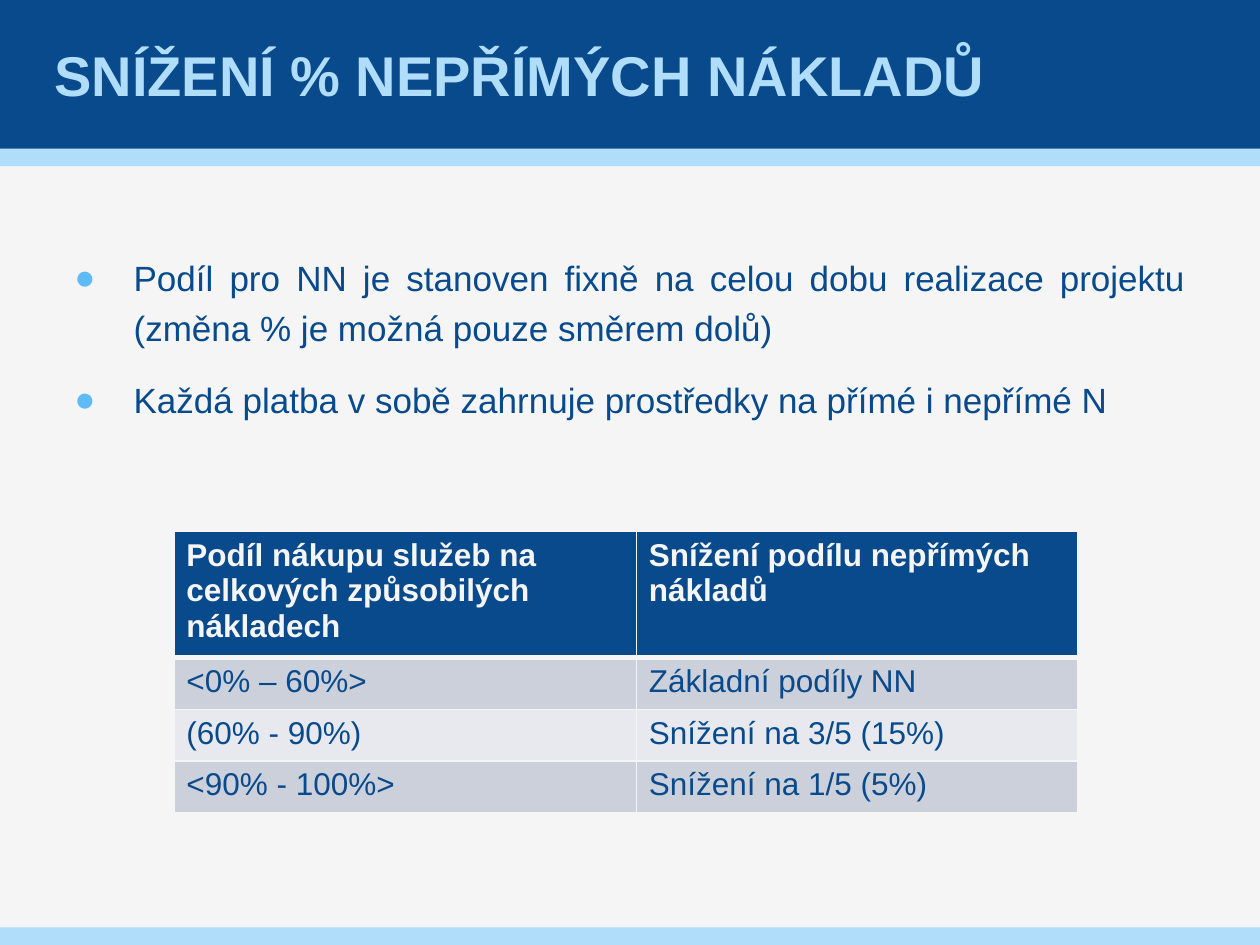
from dataclasses import dataclass

from lxml import etree
from pptx import Presentation, util as u
from pptx.dml.color import RGBColor
from pptx.enum import shapes, text
from pptx.oxml import ns

TITLE = "SNÍŽENÍ % NEPŘÍMÝCH NÁKLADŮ"
BULLETS = [
    "Podíl pro NN je stanoven fixně na celou dobu realizace projektu "
    "(změna % je možná pouze směrem dolů)",
    "Každá platba v sobě zahrnuje prostředky na přímé i nepřímé N",
]
ROWS = [
    ("Podíl nákupu služeb na celkových způsobilých nákladech",
     "Snížení podílu nepřímých nákladů"),
    ("<0% – 60%>", "Základní podíly NN"),
    ("(60% - 90%)", "Snížení na 3/5 (15%)"),
    ("<90% - 100%>", "Snížení na 1/5 (5%)"),
]


@dataclass(frozen=True)
class Theme:
    font: str = "Arial"
    paper: str = "F5F5F5"
    navy: str = "084A8B"
    sky: str = "AFDDFA"
    bullet: str = "5FBBF5"
    bands: tuple = ("E7E9EE", "CCD0DA")
    title_size: int = 32
    body_size: int = 20
    table_size: int = 18


THEME = Theme()
WIDTH, HEIGHT = 10, 7.5
HEADER, STRIPE = 1.18, 0.14
TABLE_LEFT, TABLE_TOP = 1.38, 4.22
COLUMN_WIDTHS = (3.67, 3.5)
ROW_HEIGHTS = (0.93, 0.41, 0.41, 0.41)
INDENT = 0.47


def fill(target, color):
    target.fill.solid()
    target.fill.fore_color.rgb = RGBColor.from_string(color)


def add_color(parent, tag, color):
    holder = etree.SubElement(parent, ns.qn(tag))
    etree.SubElement(holder, ns.qn("a:srgbClr"), val=color)


def write(paragraph, content, *, size, color, bold=False):
    run = paragraph.add_run()
    run.text = content
    run.font.name = THEME.font
    run.font.size = u.Pt(size)
    run.font.bold = bold
    run.font.color.rgb = RGBColor.from_string(color)


def add_bar(slide, top, height, color):
    bar = slide.shapes.add_shape(
        shapes.MSO_SHAPE.RECTANGLE, 0, u.Inches(top), u.Inches(WIDTH), u.Inches(height))
    bar.shadow.inherit = False
    fill(bar, color)
    bar.line.fill.background()


def add_frame(slide, left, top, width, height, side_margin=0):
    frame = slide.shapes.add_textbox(*map(u.Inches, (left, top, width, height))).text_frame
    frame.word_wrap = True
    frame.margin_left = frame.margin_right = u.Inches(side_margin)
    frame.margin_top = frame.margin_bottom = 0
    return frame


def format_bullet(paragraph):
    paragraph.alignment = text.PP_ALIGN.JUSTIFY
    paragraph.line_spacing = u.Pt(28.8)
    paragraph.space_before = paragraph.space_after = u.Pt(6)
    properties = paragraph._p.get_or_add_pPr()
    properties.set("marL", str(u.Inches(INDENT)))
    properties.set("indent", str(-u.Inches(INDENT)))
    add_color(properties, "a:buClr", THEME.bullet)
    etree.SubElement(properties, ns.qn("a:buFont"), typeface=THEME.font)
    etree.SubElement(properties, ns.qn("a:buChar"), char="●")


def add_borders(cell, bottom):
    properties = cell._tc.get_or_add_tcPr()
    for side, points in zip("LRTB", (1, 1, 1, bottom)):
        line = etree.SubElement(properties, ns.qn(f"a:ln{side}"), w=str(u.Pt(points)))
        add_color(line, "a:solidFill", THEME.paper)


def add_cost_table(slide):
    table = slide.shapes.add_table(
        len(ROWS), len(COLUMN_WIDTHS), u.Inches(TABLE_LEFT), u.Inches(TABLE_TOP),
        u.Inches(sum(COLUMN_WIDTHS)), u.Inches(sum(ROW_HEIGHTS))).table
    for column, width in zip(table.columns, COLUMN_WIDTHS):
        column.width = u.Inches(width)
    for index, (row, height, values) in enumerate(zip(table.rows, ROW_HEIGHTS, ROWS)):
        row.height = u.Inches(height)
        heading = index == 0
        for cell, value in zip(row.cells, values):
            add_borders(cell, 3 if index < 1 else 1)
            fill(cell, THEME.navy if heading else THEME.bands[index % 2])
            write(cell.text_frame.paragraphs[0], value, size=THEME.table_size,
                  color=THEME.paper if heading else THEME.navy, bold=heading)


def main():
    presentation = Presentation()
    presentation.slide_width, presentation.slide_height = u.Inches(WIDTH), u.Inches(HEIGHT)
    slide = presentation.slides.add_slide(presentation.slide_layouts[6])
    fill(slide.background, THEME.paper)

    for top, height, color in (
        (HEADER, STRIPE, THEME.sky),
        (0, HEADER, THEME.navy),
        (HEIGHT - STRIPE, STRIPE, THEME.sky),
    ):
        add_bar(slide, top, height, color)

    title = add_frame(slide, 0.39, 0, 9.21, HEADER, side_margin=0.04)
    title.vertical_anchor = text.MSO_ANCHOR.MIDDLE
    write(title.paragraphs[0], TITLE, size=THEME.title_size, color=THEME.sky, bold=True)

    body = add_frame(slide, 0.59, 1.97, 8.82, 5.17)
    for index, bullet in enumerate(BULLETS):
        paragraph = body.add_paragraph() if index else body.paragraphs[0]
        format_bullet(paragraph)
        write(paragraph, bullet, size=THEME.body_size, color=THEME.navy)

    add_cost_table(slide)
    presentation.save("out.pptx")


if __name__ == "__main__":
    main()
